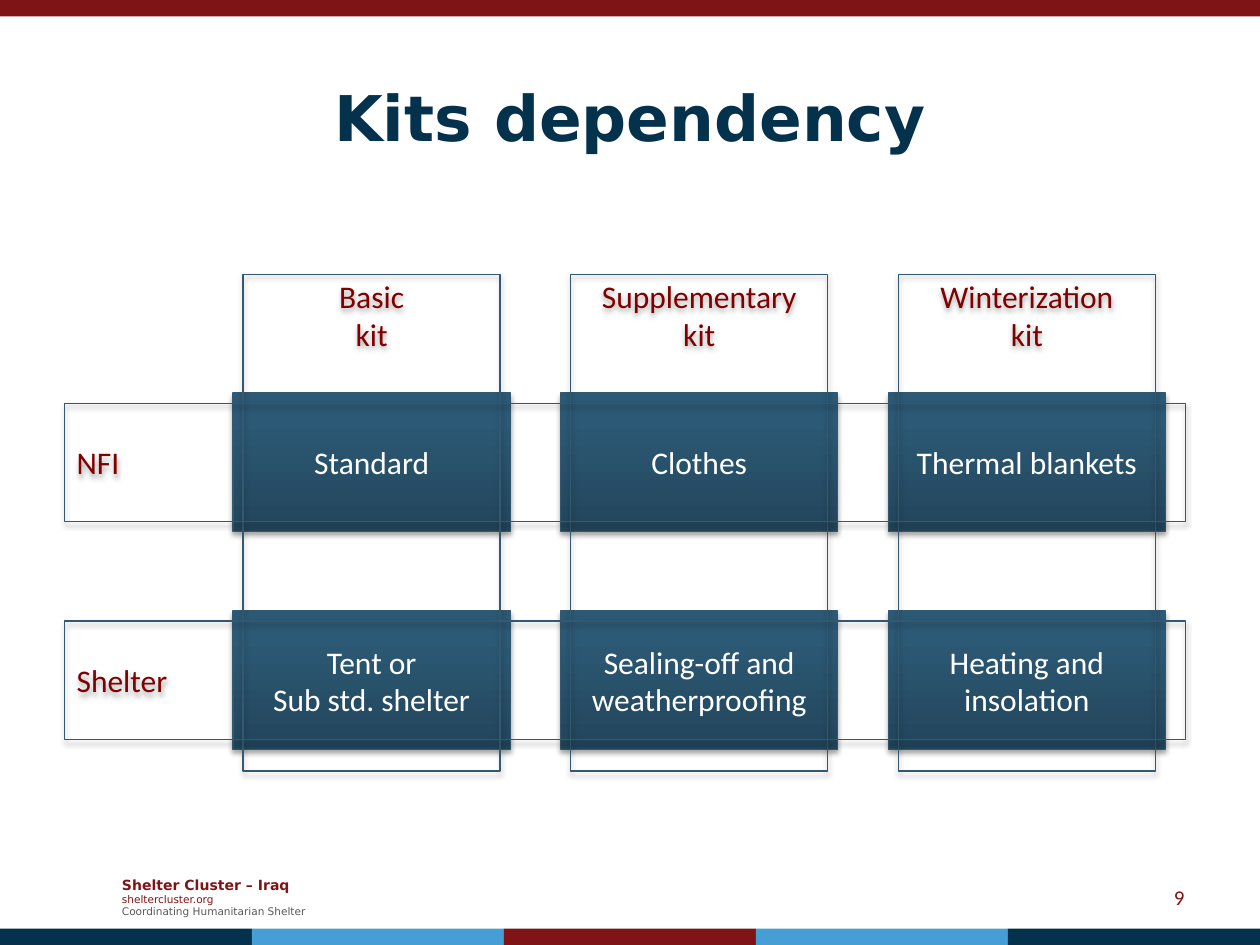
import copy

import lxml.etree
import pptx
import pptx.dml.color
import pptx.enum.shapes
import pptx.enum.text
import pptx.oxml.ns
import pptx.util

COLORS = {
    "navy": "04314C", "sky": "459FD5", "maroon": "7F1416", "label": "800000",
    "gray": "595959", "white": "FFFFFF", "outline": "33586F", "shadow": "000000",
    "cell_bottom": "22455A", "cell_middle": "2C5975", "cell_top": "2B5A77",
}
WIDTH, HEIGHT = 10, 7.5
COLUMN_PITCH, ROW_PITCH = 2.6, 1.73
CELL_WIDTH, CELL_HEIGHT = 2.2, 1.1
FRAME_INSET = 0.08
KITS = ["Basic\nkit", "Supplementary\nkit", "Winterization\nkit"]
SECTORS = {
    "NFI": ["Standard", "Clothes", "Thermal blankets"],
    "Shelter": ["Tent or\nSub std. shelter", "Sealing-off and weatherproofing",
                "Heating and insolation"],
}
ALIGN = pptx.enum.text.PP_ALIGN
ANCHOR = pptx.enum.text.MSO_ANCHOR


def rgb(name):
    """Return the named colour."""
    return pptx.dml.color.RGBColor.from_string(COLORS[name])


def inches(box):
    """Convert a box given in inches to lengths."""
    return [pptx.util.Inches(length) for length in box]


def write(shape, text, size=18, font="Calibri", color="white", bold=False,
          align=ALIGN.CENTER, anchor=ANCHOR.MIDDLE, top=0.05):
    """Fill a shape with formatted lines of text."""
    frame = shape.text_frame
    frame.word_wrap = True
    frame.vertical_anchor = anchor
    frame.margin_top = pptx.util.Inches(top)
    for index, line in enumerate(text.split("\n")):
        paragraph = frame.add_paragraph() if index else frame.paragraphs[0]
        paragraph.alignment = align
        run = paragraph.add_run()
        run.text = line
        run.font.size = pptx.util.Pt(size)
        run.font.name = font
        run.font.bold = bold
        run.font.color.rgb = rgb(color)
    return frame


def add_rectangle(slide, box, fill=None):
    """Add a plain rectangle, filled or hollow, without outline."""
    kind = pptx.enum.shapes.MSO_SHAPE.RECTANGLE
    shape = slide.shapes.add_shape(kind, *inches(box))
    shape.shadow.inherit = False
    shape.line.fill.background()
    if fill:
        shape.fill.solid()
        shape.fill.fore_color.rgb = rgb(fill)
    else:
        shape.fill.background()
    return shape


def add_panel(slide, box):
    """Add a hollow rectangle with outline and soft shadow."""
    shape = add_rectangle(slide, box)
    shape.line.color.rgb = rgb("outline")
    shape.line.width = pptx.util.Pt(0.75)
    qualified = pptx.oxml.ns.qn
    effects = shape._element.spPr.find(qualified("a:effectLst"))
    shadow = lxml.etree.SubElement(
        effects, qualified("a:outerShdw"), blurRad=str(pptx.util.Pt(3.1)),
        dist=str(pptx.util.Pt(1.8)), dir="5400000", rotWithShape="0")
    color = lxml.etree.SubElement(shadow, qualified("a:srgbClr"), val=COLORS["shadow"])
    lxml.etree.SubElement(color, qualified("a:alpha"), val="35000")
    return shape


def add_cell(slide, box, text):
    """Add one gradient cell of the matrix."""
    shape = add_panel(slide, box)
    shape.fill.gradient()
    shape.fill.gradient_angle = 90
    stop_list = shape._element.spPr.find(".//" + pptx.oxml.ns.qn("a:gsLst"))
    stop_list.append(copy.deepcopy(stop_list[-1]))
    names = ["cell_bottom", "cell_middle", "cell_top"]
    for stop, name, position in zip(shape.fill.gradient_stops, names, [0, 0.8, 1]):
        stop.color.rgb = rgb(name)
        stop.position = position
    write(shape, text)


def add_matrix(slide, box):
    """Place the cells, then the kit columns and sector rows framing them."""
    left, top, width, height = box
    first_column, first_row = left + 1.34, top + 0.94
    for row, texts in enumerate(SECTORS.values()):
        for column, text in enumerate(texts):
            add_cell(slide, (first_column + column * COLUMN_PITCH,
                             first_row + row * ROW_PITCH, CELL_WIDTH, CELL_HEIGHT), text)
    for column, kit in enumerate(KITS):
        panel = add_panel(slide, (first_column + column * COLUMN_PITCH + FRAME_INSET, top,
                                  CELL_WIDTH - 2 * FRAME_INSET, height))
        write(panel, kit, color="label", anchor=ANCHOR.TOP, top=0.02)
    for row, sector in enumerate(SECTORS):
        panel = add_panel(slide, (left, first_row + row * ROW_PITCH + FRAME_INSET, width,
                                  CELL_HEIGHT - 2 * FRAME_INSET))
        write(panel, sector, color="label", align=ALIGN.LEFT)


def add_bands(slide, box):
    """Draw the top band and the five-coloured bottom band."""
    left, top, width, height = box
    thickness = 0.13
    add_rectangle(slide, (left, top, width, thickness), "maroon")
    step = width / 5
    for index, color in enumerate(["navy", "sky", "maroon", "sky", "navy"]):
        add_rectangle(slide, (left + index * step, top + height - thickness,
                              step, thickness), color)


def add_footer(slide, box):
    """Write the organisation lines at the left and the page number at the right."""
    left, top, width, height = box
    credit = slide.shapes.add_textbox(*inches((left, top, 1.73, height)))
    frame = write(credit, "Shelter Cluster – Iraq\nsheltercluster.org\n"
                  "Coordinating Humanitarian Shelter", size=6, font="DejaVu Sans",
                  color="maroon", align=ALIGN.LEFT)
    frame.word_wrap = False
    heading, _, motto = [paragraph.runs[0].font for paragraph in frame.paragraphs]
    heading.size, heading.bold = pptx.util.Pt(8), True
    motto.color.rgb = rgb("gray")
    number_width = 2.33
    number = slide.shapes.add_textbox(
        *inches((left + width - number_width, top + 0.02, number_width, 0.4)))
    write(number, "9", size=12, color="maroon", align=ALIGN.RIGHT)


def add_title(slide, box, text):
    """Place and format the title placeholder."""
    title = slide.shapes.title
    title.left, title.top, title.width, title.height = inches(box)
    write(title, text, size=36, font="DejaVu Sans", color="navy", bold=True)


def main():
    """Build the slide and save it."""
    presentation = pptx.Presentation()
    presentation.slide_width, presentation.slide_height = inches((WIDTH, HEIGHT))
    slide = presentation.slides.add_slide(presentation.slide_layouts[5])
    add_bands(slide, (0, 0, WIDTH, HEIGHT))
    add_title(slide, (0.5, 0.3, 9, 1.25), "Kits dependency")
    add_footer(slide, (0.87, 6.9, 8.63, 0.44))
    add_matrix(slide, (0.51, 2.18, 8.9, 3.94))
    presentation.save("out.pptx")


if __name__ == "__main__":
    main()
